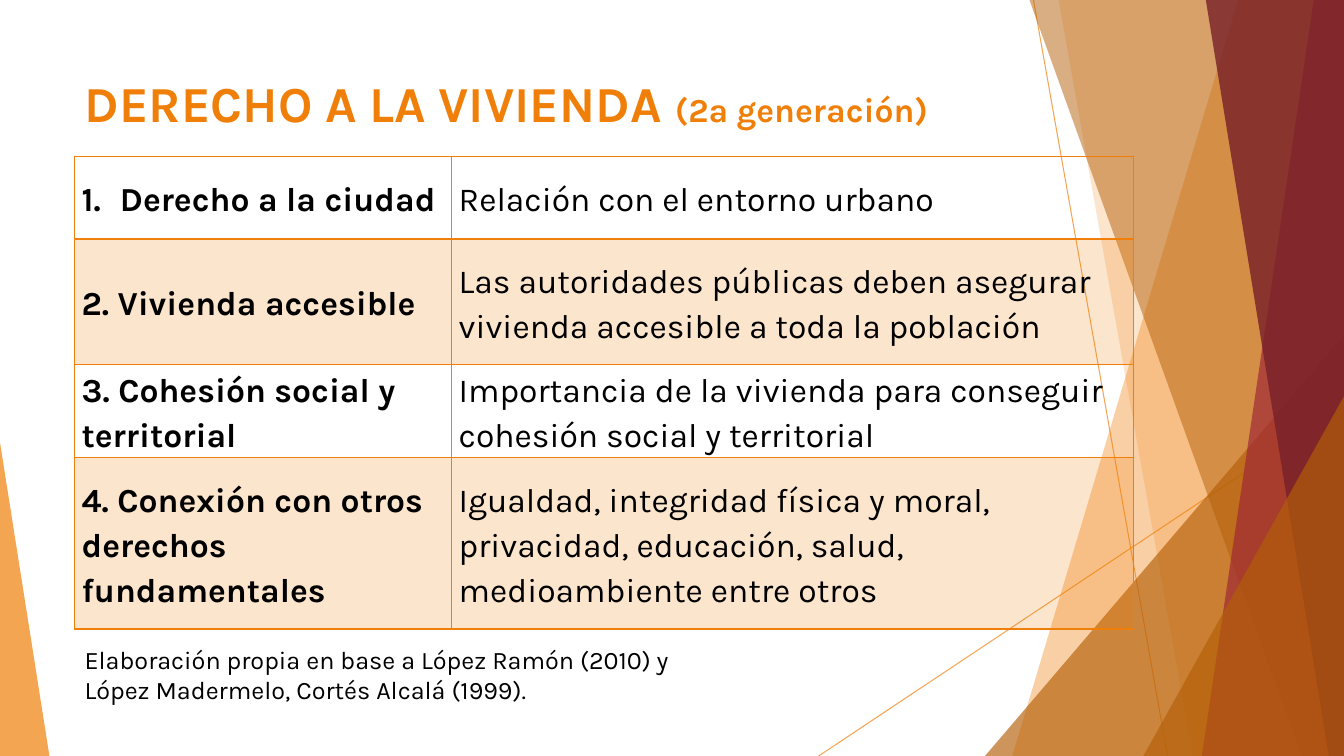
import pptx
import pptx.util
import pptx.dml.color
import pptx.enum.shapes
import pptx.enum.text
import pptx.oxml
import pptx.oxml.ns
from lxml import etree

WIDTH, HEIGHT = 13.33, 7.5
MARGIN = 0.74
FONT = "Karla"
ORANGE, BROWN, RED, WINE, BLACK = "F07F09", "B45F07", "9F2936", "771F28", "000000"

TITLE = [("DERECHO A LA VIVIENDA ", 36), ("(2ª generación)", 24)]
RIGHTS = [
    ("Derecho a la ciudad", "Relación con el entorno urbano"),
    ("2. Vivienda accesible",
     "Las autoridades públicas deben asegurar vivienda accesible a toda la población"),
    ("3. Cohesión social y territorial",
     "Importancia de la vivienda para conseguir cohesión social y territorial"),
    ("4. Conexión con otros derechos fundamentales",
     "Igualdad, integridad física y moral, privacidad, educación, salud, "
     "medioambiente entre otros"),
]
SOURCE = "Elaboración propia en base a López Ramón (2010) y\vLópez Madermelo, Cortés Alcalá (1999)."
COLUMN_WIDTHS = [3.74, 6.76]
ROW_HEIGHTS = [0.82, 1.25, 0.82, 1.7]

RAYS = [((10.25, 0), (11.58, HEIGHT)), ((WIDTH, 4.03), (8.12, HEIGHT))]
# Back to front. A band reaches the right edge: top x, bottom x.
# A wedge stands on the bottom edge: left, top, width, apex share.
DECORATION = [
    ("band", (12.28, 10.04), ORANGE, 36),
    ("band", (10.5, 11.83), ORANGE, 20),
    ("wedge", (9.77, 3.33, 3.56, 1), BROWN, 66),
    ("band", (10.21, 12.91), BROWN, 50),
    ("band", (13.03, 11.92), RED, 70),
    ("band", (11.96, 13.18), WINE, 80),
    ("wedge", (11.34, 3.93, 1.99, 1), BROWN, 66),
    ("wedge", (0, 4.39, 0.49, 0), ORANGE, 70),
]

inches = pptx.util.Inches
qn = pptx.oxml.ns.qn


def paint(fill, color, opacity=100):
    fill.solid()
    fill.fore_color.rgb = pptx.dml.color.RGBColor.from_string(color)
    if opacity < 100:
        color_element = fill._xPr.find(".//" + qn("a:srgbClr"))
        etree.SubElement(color_element, qn("a:alpha")).set("val", str(opacity * 1000))


def style(font, size, color, bold=False):
    font.name, font.size, font.bold = FONT, pptx.util.Pt(size), bold
    paint(font.fill, color)


def add_ray(slide, start, end):
    ray = slide.shapes.add_connector(
        pptx.enum.shapes.MSO_CONNECTOR.STRAIGHT, *map(inches, start + end))
    ray.line.width = pptx.util.Pt(0.75)
    paint(ray.line.fill, ORANGE, 70)
    etree.SubElement(ray._element.spPr, qn("a:effectLst"))


def add_band(slide, top_x, bottom_x):
    builder = slide.shapes.build_freeform(inches(top_x), 0)
    corners = [(WIDTH, 0), (WIDTH, HEIGHT), (bottom_x, HEIGHT)]
    builder.add_line_segments([(inches(x), inches(y)) for x, y in corners], close=True)
    return builder.convert_to_shape()


def add_wedge(slide, left, top, width, apex):
    wedge = slide.shapes.add_shape(
        pptx.enum.shapes.MSO_SHAPE.ISOSCELES_TRIANGLE,
        *map(inches, (left, top, width, HEIGHT - top)))
    wedge.adjustments[0] = apex
    return wedge


def add_text_box(slide, top, width, height):
    frame = slide.shapes.add_textbox(*map(inches, (MARGIN, top, width, height))).text_frame
    frame.word_wrap = True
    return frame


def set_borders(cell, bottom_width):
    """Put the four edges ahead of the fill, as the schema asks."""
    properties = cell._tc.get_or_add_tcPr()
    widths = {"L": 1, "R": 1, "T": 1, "B": bottom_width}
    for position, (side, width) in enumerate(widths.items()):
        properties.insert(position, pptx.oxml.parse_xml(
            f'<a:ln{side} {pptx.oxml.ns.nsdecls("a")} w="{pptx.util.Pt(width)}">'
            f'<a:solidFill><a:srgbClr val="{ORANGE}"/></a:solidFill></a:ln{side}>'))


def number_paragraph(paragraph):
    properties = paragraph._p.get_or_add_pPr()
    properties.set("marL", str(inches(0.38)))
    properties.set("indent", str(-inches(0.38)))
    etree.SubElement(properties, qn("a:buAutoNum")).set("type", "arabicPeriod")


def fill_cell(cell, text, row, column):
    cell.vertical_anchor = pptx.enum.text.MSO_ANCHOR.MIDDLE
    cell.margin_left = cell.margin_right = inches(0.07)
    cell.margin_top = cell.margin_bottom = 0
    if row % 2:
        paint(cell.fill, ORANGE, 20)
    else:
        cell.fill.background()
    set_borders(cell, 2 if row == 0 else 1)
    cell.text = text
    paragraph = cell.text_frame.paragraphs[0]
    paragraph.line_spacing = 1.15
    if (row, column) == (0, 0):
        number_paragraph(paragraph)
    style(paragraph.font, 24, BLACK, bold=column == 0)


def add_rights_table(slide):
    table = slide.shapes.add_table(
        len(RIGHTS), len(COLUMN_WIDTHS), inches(MARGIN), inches(1.55),
        inches(sum(COLUMN_WIDTHS)), inches(sum(ROW_HEIGHTS))).table
    table.first_row = table.horz_banding = False
    for column, width in zip(table.columns, COLUMN_WIDTHS):
        column.width = inches(width)
    for row, height in zip(table.rows, ROW_HEIGHTS):
        row.height = inches(height)
    for row, texts in enumerate(RIGHTS):
        for column, text in enumerate(texts):
            fill_cell(table.cell(row, column), text, row, column)


def main():
    presentation = pptx.Presentation()
    presentation.slide_width, presentation.slide_height = inches(WIDTH), inches(HEIGHT)
    slide = presentation.slides.add_slide(presentation.slide_layouts[6])

    for start, end in RAYS:
        add_ray(slide, start, end)
    builders = {"band": add_band, "wedge": add_wedge}
    for kind, geometry, color, opacity in DECORATION:
        shape = builders[kind](slide, *geometry)
        shape.shadow.inherit = False
        shape.line.fill.background()
        paint(shape.fill, color, opacity)

    title = add_text_box(slide, 0.67, 9.4, 1.44).paragraphs[0]
    for text, size in TITLE:
        run = title.add_run()
        run.text = text
        style(run.font, size, ORANGE, bold=True)

    add_rights_table(slide)

    source = add_text_box(slide, 6.34, 6.67, 0.71)
    source.text = SOURCE
    style(source.paragraphs[0].font, 18, BLACK)

    presentation.save("out.pptx")


if __name__ == "__main__":
    main()
